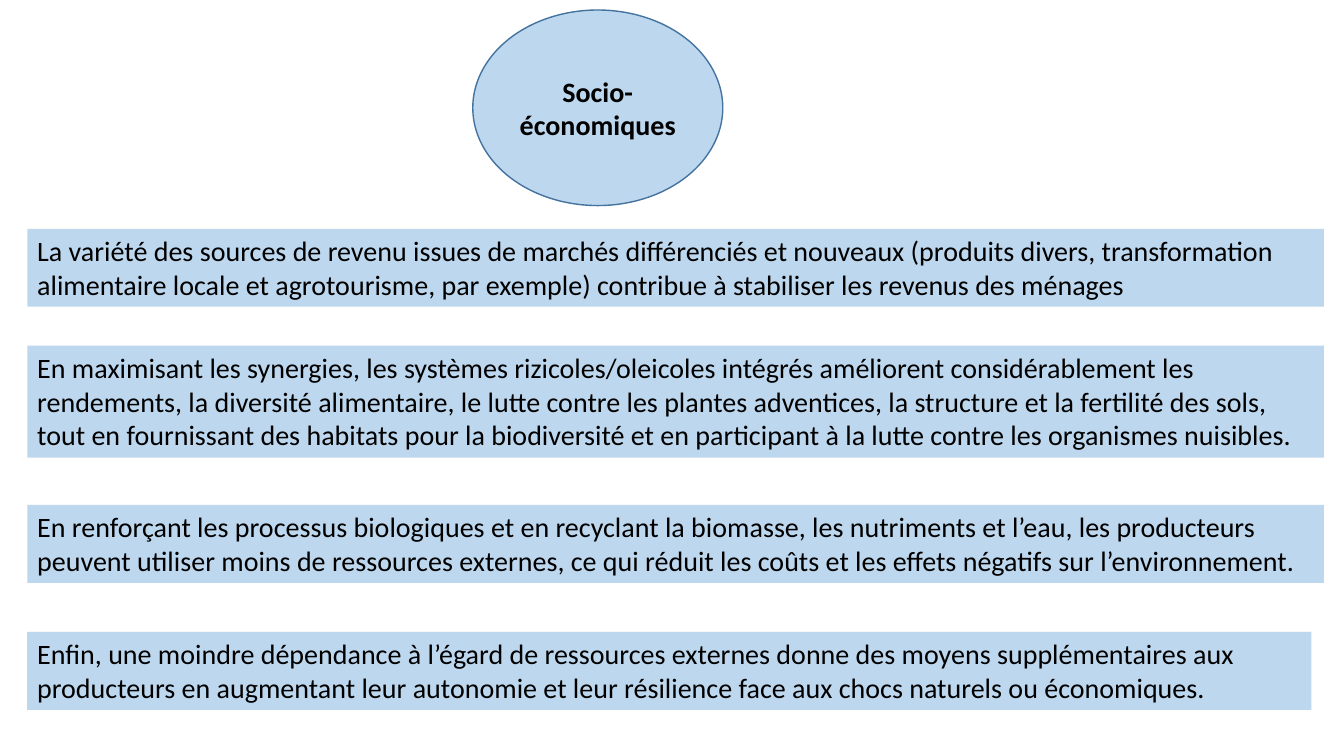
from dataclasses import dataclass

from pptx import Presentation
from pptx import util as u
from pptx.dml.color import RGBColor
from pptx.enum import shapes, text

PALE_BLUE = RGBColor(0xBD, 0xD7, 0xEE)
DARK_BLUE = RGBColor(0x43, 0x73, 0x9E)
BLACK = RGBColor(0, 0, 0)
WIDTH = u.Inches(13.33)
HEIGHT = u.Inches(7.5)

LEFT_MARGIN = 2.03
FULL_WIDTH = 96.47
LINE_HEIGHT = 4.5
BOX_PADDING = 1.3


@dataclass(frozen=True)
class Area:
    """Left, top, width and height in percent of the slide."""
    left: float
    top: float
    width: float
    height: float


@dataclass(frozen=True)
class Benefit:
    top: float
    lines: int
    wording: str
    width: float = FULL_WIDTH

    def area(self) -> Area:
        height = BOX_PADDING + self.lines * LINE_HEIGHT
        return Area(LEFT_MARGIN, self.top, self.width, height)


THEME_AREA = Area(35.18, 1.33, 18.6, 25.87)
BENEFITS = [
    Benefit(30.27, 2, "La variété des sources de revenu issues de marchés différenciés et nouveaux "
            "(produits divers, transformation alimentaire locale et agrotourisme, par exemple) "
            "contribue à stabiliser les revenus des ménages"),
    Benefit(45.73, 3, "En maximisant les synergies, les systèmes rizicoles/oleicoles intégrés "
            "améliorent considérablement les rendements, la diversité alimentaire, le lutte contre "
            "les plantes adventices, la structure et la fertilité des sols, tout en fournissant des "
            "habitats pour la biodiversité et en participant à la lutte contre les organismes nuisibles."),
    Benefit(66.8, 2, "En renforçant les processus biologiques et en recyclant la biomasse, les "
            "nutriments et l’eau, les producteurs peuvent utiliser moins de ressources externes, "
            "ce qui réduit les coûts et les effets négatifs sur l’environnement."),
    Benefit(83.6, 2, "Enfin, une moindre dépendance à l’égard de ressources externes donne des "
            "moyens supplémentaires aux producteurs en augmentant leur autonomie et leur "
            "résilience face aux chocs naturels ou économiques.", width=95.55),
]


def write_text(shape, wording: str, *, bold: bool = False,
               align=text.PP_ALIGN.LEFT, anchor=text.MSO_ANCHOR.TOP,
               fit=text.MSO_AUTO_SIZE.NONE) -> None:
    frame = shape.text_frame
    frame.word_wrap = True
    frame.auto_size = fit
    frame.vertical_anchor = anchor
    paragraph = frame.paragraphs[0]
    paragraph.alignment = align
    run = paragraph.add_run()
    run.text = wording
    run.font.name = "Calibri"
    run.font.size = u.Pt(20)
    run.font.bold = bold
    run.font.color.rgb = BLACK


def add_panel(slide, kind, area: Area):
    shape = slide.shapes.add_shape(
        kind, round(WIDTH * area.left / 100), round(HEIGHT * area.top / 100),
        round(WIDTH * area.width / 100), round(HEIGHT * area.height / 100))
    shape.shadow.inherit = False
    shape.fill.solid()
    shape.fill.fore_color.rgb = PALE_BLUE
    shape.line.fill.background()
    return shape


def add_theme(slide) -> None:
    ellipse = add_panel(slide, shapes.MSO_SHAPE.OVAL, THEME_AREA)
    ellipse.line.color.rgb = DARK_BLUE
    ellipse.line.width = u.Pt(1)
    write_text(ellipse, "Socio-économiques", bold=True,
               align=text.PP_ALIGN.CENTER, anchor=text.MSO_ANCHOR.MIDDLE)


def add_benefit(slide, benefit: Benefit) -> None:
    box = add_panel(slide, shapes.MSO_SHAPE.RECTANGLE, benefit.area())
    write_text(box, benefit.wording, fit=text.MSO_AUTO_SIZE.SHAPE_TO_FIT_TEXT)


def main() -> None:
    presentation = Presentation()
    presentation.slide_width = WIDTH
    presentation.slide_height = HEIGHT
    slide = presentation.slides.add_slide(presentation.slide_layouts[6])
    add_theme(slide)
    for benefit in BENEFITS:
        add_benefit(slide, benefit)
    presentation.save("out.pptx")


if __name__ == "__main__":
    main()
